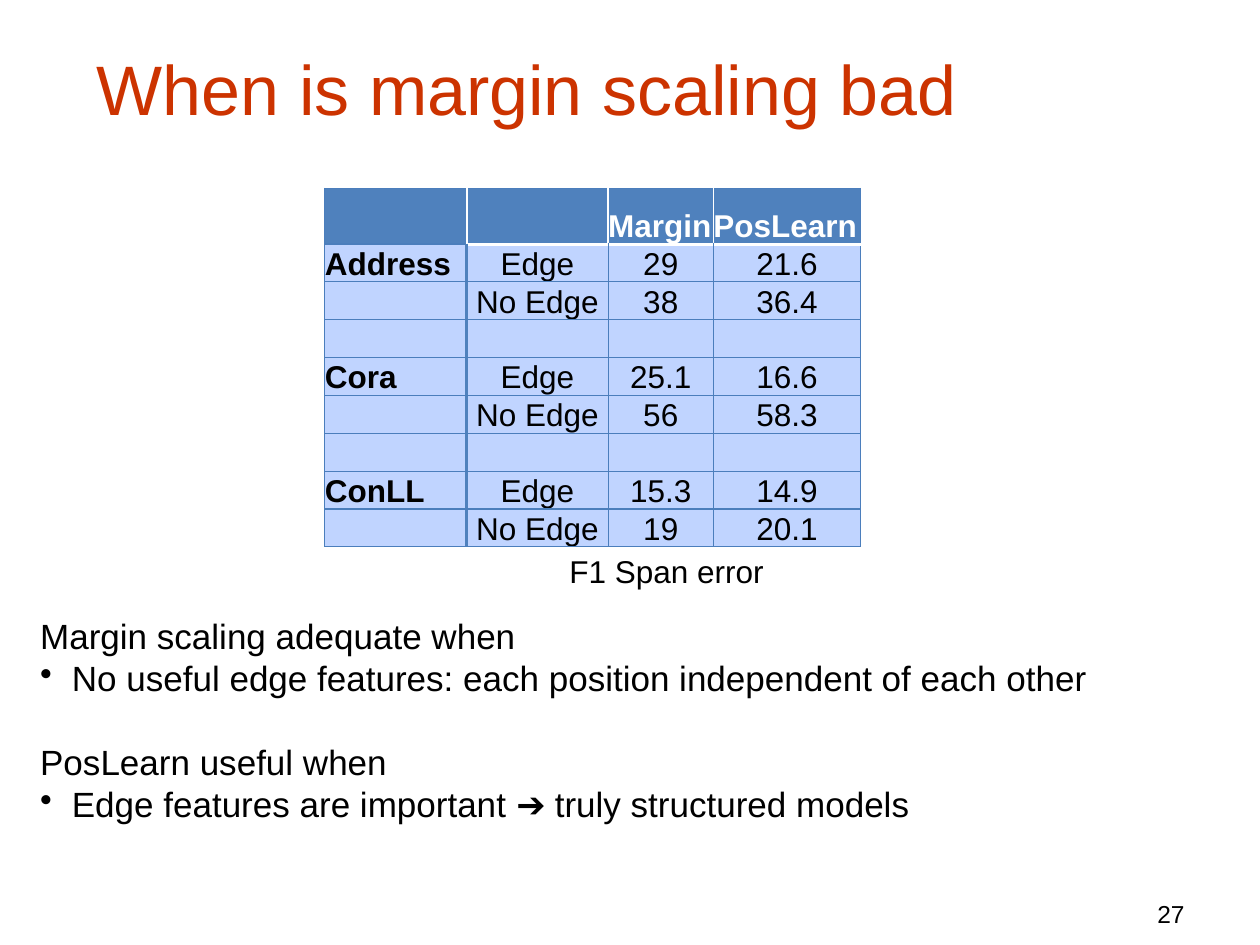
"""Build the slide comparing margin scaling with PosLearn."""
from dataclasses import dataclass

from lxml import etree
from pptx import Presentation
from pptx.dml.color import RGBColor
from pptx.enum.text import MSO_ANCHOR, PP_ALIGN
from pptx.oxml.ns import qn
from pptx.util import Cm, Pt

LEFT, CENTER, RIGHT = PP_ALIGN.LEFT, PP_ALIGN.CENTER, PP_ALIGN.RIGHT
TOP, BOTTOM = MSO_ANCHOR.TOP, MSO_ANCHOR.BOTTOM
TITLE_ONLY = 5


@dataclass(frozen=True)
class Theme:
    """Fonts, colours and type sizes of the slide."""
    font: str = "Arial"
    title: str = "CC3300"
    ink: str = "000000"
    white: str = "FFFFFF"
    header: str = "4F81BD"
    body: str = "C0D4FF"
    rule: str = "4B7EBC"
    title_size: int = 40
    conclusion_size: int = 20
    table_size: int = 18
    number_size: int = 14


@dataclass(frozen=True)
class Area:
    """A rectangle in centimetres."""
    left: float
    top: float
    width: float
    height: float


@dataclass(frozen=True)
class Line:
    """One paragraph of the conclusions."""
    text: str
    bullet: bool = False
    gap: float = 0


THEME = Theme()
TABLE_AREA = Area(6.55, 3.8, 10.8, 7.22)
COLUMN_WIDTHS = (2.86, 2.85, 2.12, 2.97)
HEADER_HEIGHT, ROW_HEIGHT = 1.12, 0.76
ROWS = (
    ("", "", "Margin", "PosLearn"),
    ("Address", "Edge", "29", "21.6"),
    ("", "No Edge", "38", "36.4"),
    ("", "", "", ""),
    ("Cora", "Edge", "25.1", "16.6"),
    ("", "No Edge", "56", "58.3"),
    ("", "", "", ""),
    ("ConLL", "Edge", "15.3", "14.9"),
    ("", "No Edge", "19", "20.1"),
)
CONCLUSIONS = (
    Line("Margin scaling adequate when"),
    Line("No useful edge features: each position independent of each other", bullet=True),
    Line("PosLearn useful when", gap=24),
    Line("Edge features are important ➔ truly structured models", bullet=True),
)


def write(para, text: str, *, size: int, color: str = THEME.ink,
          bold: bool = False, align=LEFT) -> None:
    """Write formatted text into a paragraph."""
    para.alignment = align
    span = para.add_run()
    span.text = text
    span.font.name = THEME.font
    span.font.size = Pt(size)
    span.font.bold = bold
    span.font.color.rgb = RGBColor.from_string(color)


def place(shape, area: Area) -> None:
    """Move and size a shape."""
    shape.left, shape.top = Cm(area.left), Cm(area.top)
    shape.width, shape.height = Cm(area.width), Cm(area.height)


def add_box(page, area: Area, anchor=TOP):
    """Add a wrapping text box and return its frame."""
    box = page.shapes.add_textbox(0, 0, 0, 0)
    place(box, area)
    box.text_frame.word_wrap = True
    box.text_frame.vertical_anchor = anchor
    return box.text_frame


def add_bullet(para) -> None:
    """Give a paragraph a hanging bullet."""
    properties = para._p.get_or_add_pPr()
    properties.set("marL", str(Cm(0.64)))
    properties.set("indent", str(-Cm(0.64)))
    etree.SubElement(properties, qn("a:buChar"), char="•")


def add_border(cell, side: str, color: str, width: float) -> None:
    """Draw one side of a table cell."""
    line = etree.SubElement(cell._tc.get_or_add_tcPr(), qn(f"a:ln{side}"), w=str(Pt(width)))
    fill = etree.SubElement(line, qn("a:solidFill"))
    etree.SubElement(fill, qn("a:srgbClr"), val=color)


def cell_borders(row: int, column: int) -> dict[str, tuple[str, float]]:
    """Return the borders of a cell by side, in schema order."""
    thin, white, thick = (THEME.rule, 0.75), (THEME.white, 2), (THEME.header, 2)
    if row == 0:
        sides = {"L": thin} if column == 0 else {}
        if column == len(COLUMN_WIDTHS) - 1:
            sides["R"] = thin
        return sides | {"T": thin, "B": white if column else thin}
    return {
        "L": thick if column == 1 else thin,
        "R": thick if column == 0 else thin,
        "T": white if row == 1 and column else thin,
        "B": thin,
    }


def fill_cell(cell, text: str, row: int, column: int) -> None:
    """Format and fill one table cell."""
    header = row == 0
    cell.margin_left = cell.margin_right = cell.margin_top = cell.margin_bottom = 0
    cell.vertical_anchor = BOTTOM
    for side, (color, width) in cell_borders(row, column).items():
        add_border(cell, side, color, width)
    cell.fill.solid()
    cell.fill.fore_color.rgb = RGBColor.from_string(THEME.header if header else THEME.body)
    if text:
        write(cell.text_frame.paragraphs[0], text, size=THEME.table_size,
              color=THEME.white if header else THEME.ink,
              bold=header or column == 0,
              align=LEFT if header or column == 0 else CENTER)


def add_results(page) -> None:
    """Add the table of span errors."""
    frame = page.shapes.add_table(len(ROWS), len(COLUMN_WIDTHS), 0, 0, 0, 0)
    place(frame, TABLE_AREA)
    table = frame.table
    for column, width in zip(table.columns, COLUMN_WIDTHS):
        column.width = Cm(width)
    for row, values in enumerate(ROWS):
        table.rows[row].height = Cm(ROW_HEIGHT if row else HEADER_HEIGHT)
        for column, text in enumerate(values):
            fill_cell(table.cell(row, column), text, row, column)


def add_conclusions(page) -> None:
    """Add the conclusions below the table."""
    frame = add_box(page, Area(0.56, 12.27, 22.4, 4.52))
    for index, line in enumerate(CONCLUSIONS):
        para = frame.add_paragraph() if index else frame.paragraphs[0]
        write(para, line.text, size=THEME.conclusion_size)
        if line.gap:
            para.space_before = Pt(line.gap)
        if line.bullet:
            add_bullet(para)


def main() -> None:
    """Build and save the deck."""
    deck = Presentation()
    deck.slide_width, deck.slide_height = Cm(25.4), Cm(19.05)
    page = deck.slides.add_slide(deck.slide_layouts[TITLE_ONLY])
    title = page.shapes.title
    place(title, Area(1.7, 0.84, 22.7, 1.9))
    title.text_frame.vertical_anchor = BOTTOM
    write(title.text_frame.paragraphs[0], "When is margin scaling bad",
          size=THEME.title_size, color=THEME.title)
    add_conclusions(page)
    add_results(page)
    caption = add_box(page, Area(11.23, 11, 4.47, 1.02))
    write(caption.paragraphs[0], "F1 Span error", size=THEME.table_size)
    number = add_box(page, Area(18.85, 17.58, 5.28, 1.27), BOTTOM)
    write(number.paragraphs[0], "27", size=THEME.number_size, align=RIGHT)
    deck.save("out.pptx")


if __name__ == "__main__":
    main()
